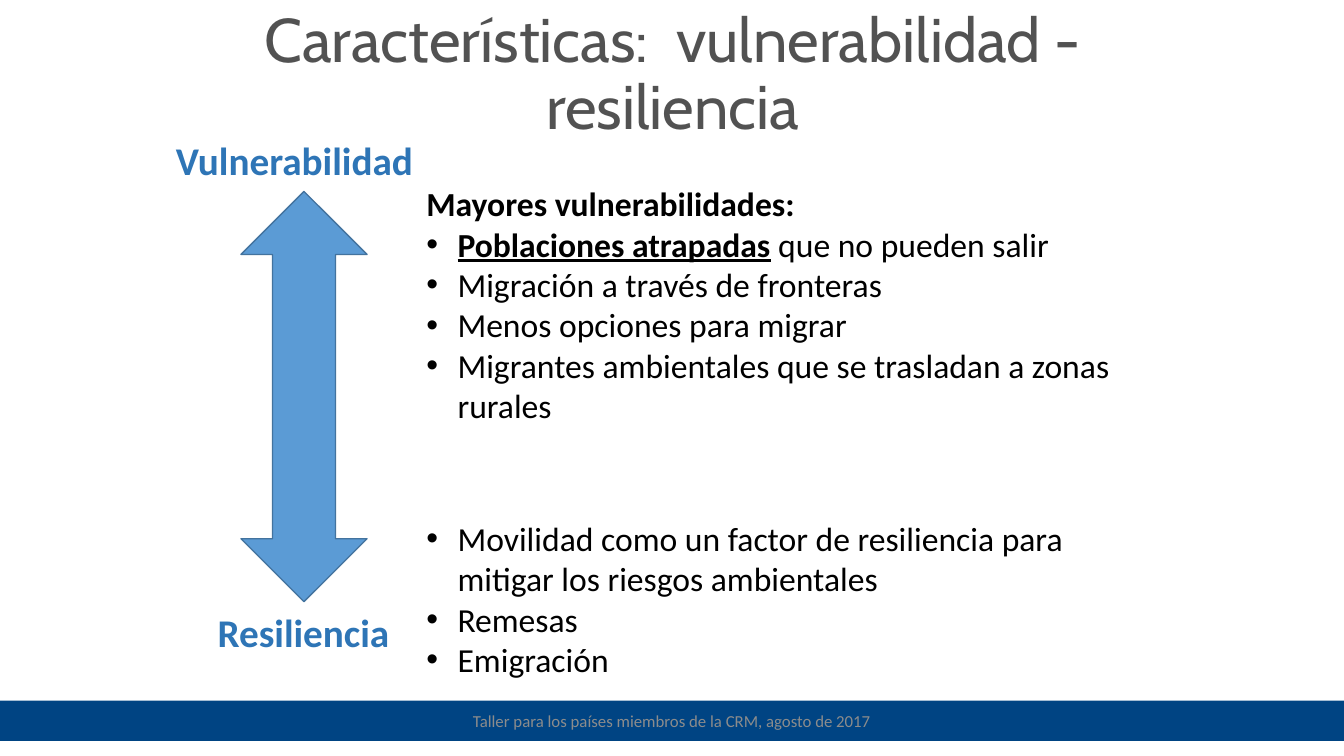
from lxml.etree import SubElement
from pptx import Presentation
from pptx.dml.color import RGBColor
from pptx.enum.shapes import MSO_SHAPE as Shape
from pptx.enum.text import MSO_ANCHOR as Anchor, MSO_AUTO_SIZE as AutoSize, PP_ALIGN as Align
from pptx.oxml.ns import qn
from pptx.util import Inches, Pt

BLACK = "000000"
LABEL_BLUE = "2E75B6"


def color(value):
    return RGBColor.from_string(value)


def place(shape, left, top, width, height):
    shape.left, shape.top = Inches(left), Inches(top)
    shape.width, shape.height = Inches(width), Inches(height)


def add_span(para, text, size, value, font="Calibri", bold=False, underline=False):
    span = para.add_run()
    span.text = text
    span.font.name = font
    span.font.size = Pt(size)
    span.font.bold = bold
    span.font.underline = underline
    span.font.color.rgb = color(value)


def set_bullet(para):
    props = para._p.get_or_add_pPr()
    props.set("marL", str(Inches(0.31)))
    props.set("indent", str(-Inches(0.31)))
    SubElement(props, qn("a:buFont"), typeface="Arial")
    SubElement(props, qn("a:buChar"), char="•")


def add_title(page, text):
    title = page.shapes.title
    place(title, 1.31, 0.41, 10.73, 0.69)
    frame = title.text_frame
    frame.word_wrap = True
    frame.auto_size = AutoSize.NONE
    frame.vertical_anchor = Anchor.MIDDLE
    para = frame.paragraphs[0]
    para.alignment = Align.CENTER
    para.line_spacing = 0.9
    add_span(para, text, 44, "525252", font="Cabin")


def add_text_box(page, left, top, width, height):
    box = page.shapes.add_textbox(Inches(left), Inches(top), Inches(width), Inches(height))
    box.text_frame.word_wrap = True
    return box.text_frame


def add_label(page, text, left, top, width):
    """Add a centred caption for one end of the arrow."""
    frame = add_text_box(page, left, top, width, 0.69)
    frame.vertical_anchor = Anchor.MIDDLE
    frame.margin_left = frame.margin_right = 0
    frame.margin_top, frame.margin_bottom = Inches(0.09), Inches(0.1)
    para = frame.paragraphs[0]
    para.alignment = Align.CENTER
    para.line_spacing = 0.9
    add_span(para, text, 28, LABEL_BLUE, bold=True)


def add_list(page, left, top, width, height, items, heading=None, key_phrase=None):
    """Add bullets; key_phrase is emphasised at the start of the first one."""
    frame = add_text_box(page, left, top, width, height)
    frame.auto_size = AutoSize.SHAPE_TO_FIT_TEXT
    para = frame.paragraphs[0]
    if heading:
        add_span(para, heading, 24, BLACK, bold=True)
        para = frame.add_paragraph()
    for index, item in enumerate(items):
        if index:
            para = frame.add_paragraph()
        set_bullet(para)
        if key_phrase and index == 0:
            add_span(para, key_phrase, 24, BLACK, bold=True, underline=True)
        add_span(para, item, 24, BLACK)


def add_shape(page, kind, left, top, width, height, fill, line=None):
    shape = page.shapes.add_shape(kind, Inches(left), Inches(top), Inches(width), Inches(height))
    shape.shadow.inherit = False
    shape.fill.solid()
    shape.fill.fore_color.rgb = color(fill)
    if line:
        shape.line.color.rgb = color(line)
        shape.line.width = Pt(1)
    else:
        shape.line.fill.background()
    return shape


def add_footer_bar(page, text):
    bar = add_shape(page, Shape.RECTANGLE, 0, 6.95, 13.33, 0.4, "004483")
    bar.text_frame.vertical_anchor = Anchor.MIDDLE
    para = bar.text_frame.paragraphs[0]
    para.alignment = Align.CENTER
    add_span(para, text, 12, "8C8C8C")


def main():
    deck = Presentation()
    deck.slide_width, deck.slide_height = Inches(13.33), Inches(7.5)
    page = deck.slides.add_slide(deck.slide_layouts[5])

    add_title(page, "Características:  vulnerabilidad - resiliencia")
    add_list(
        page, 4.13, 1.77, 7.08, 2.52,
        [
            " que no pueden salir",
            "Migración a través de fronteras",
            "Menos opciones para migrar",
            "Migrantes ambientales que se trasladan a zonas rurales",
        ],
        heading="Mayores vulnerabilidades:",
        key_phrase="Poblaciones atrapadas",
    )
    add_shape(page, Shape.UP_DOWN_ARROW, 2.39, 1.9, 1.25, 4.07, "5B9BD5", "43739E")
    add_label(page, "Vulnerabilidad", 1.65, 1.27, 2.54)
    add_label(page, "Resiliencia", 2.11, 5.96, 1.8)
    add_list(
        page, 4.13, 5.09, 6.79, 2.02,
        [
            "Movilidad como un factor de resiliencia para mitigar los riesgos ambientales",
            "Remesas",
            "Emigración",
        ],
    )
    add_footer_bar(page, "Taller para los países miembros de la CRM, agosto de 2017")
    deck.save("out.pptx")


if __name__ == "__main__":
    main()
